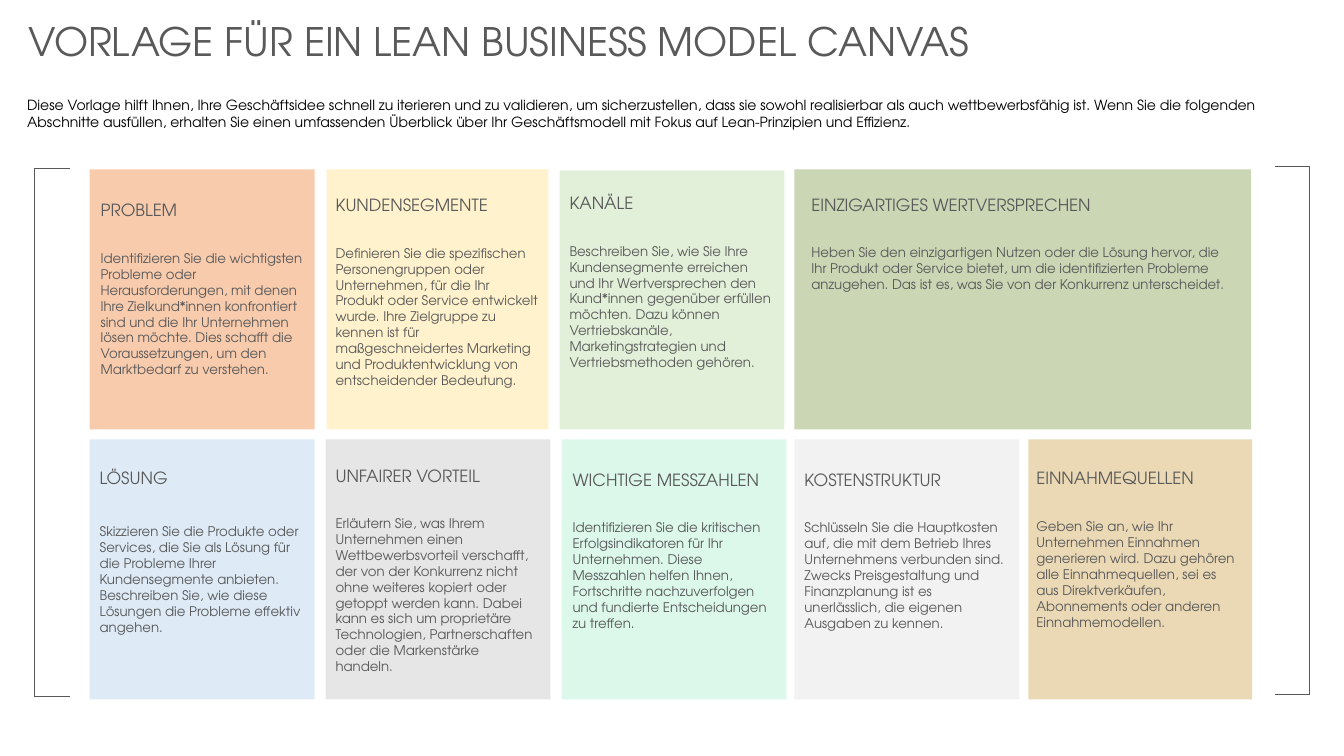
from pptx import Presentation
from pptx.dml.color import RGBColor
from pptx.enum.shapes import MSO_CONNECTOR, MSO_SHAPE
from pptx.enum.text import MSO_ANCHOR, MSO_AUTO_SIZE, PP_ALIGN
from pptx.oxml.ns import qn
from pptx.util import Pt
from lxml import etree

STRAIGHT = MSO_CONNECTOR.STRAIGHT
RECTANGLE = MSO_SHAPE.RECTANGLE
TOP = MSO_ANCHOR.TOP
FIT_SHAPE = MSO_AUTO_SIZE.SHAPE_TO_FIT_TEXT
LEFT = PP_ALIGN.LEFT

EMU_PER_PX = 9144  # 100 px to the inch
TITLE_ONLY = 5
FONT = "TeX Gyre Adventor"
GREY, BLACK = "595959", "000000"


def px(length):
    return length * EMU_PER_PX


def rgb(color):
    return RGBColor.from_string(color)


class Canvas:
    """Style and current slide of the business model canvas."""

    frame_format = {"word_wrap": True, "auto_size": FIT_SHAPE, "vertical_anchor": TOP}

    def __init__(self, slide):
        self.slide = slide

    def set_wording(self, shape, wording, size, color=GREY):
        frame = shape.text_frame
        for name, value in self.frame_format.items():
            setattr(frame, name, value)
        paragraph = frame.paragraphs[0]
        paragraph.alignment = LEFT
        run = paragraph.add_run()
        run.text = wording
        for name, value in {"name": FONT, "size": Pt(size), "bold": False}.items():
            setattr(run.font, name, value)
        run.font.color.rgb = rgb(color)

    def title(self, box, wording, size):
        heading = self.slide.shapes.title
        for name, value in zip(("left", "top", "width", "height"), box):
            setattr(heading, name, px(value))
        self.set_wording(heading, wording, size)

    def text(self, box, wording, size, color=GREY):
        self.set_wording(self.slide.shapes.add_textbox(*map(px, box)), wording, size, color)

    def panel(self, box, color):
        panel = self.slide.shapes.add_shape(RECTANGLE, *map(px, box))
        panel.shadow.inherit = False
        panel.fill.solid()
        panel.fill.fore_color.rgb = rgb(color)
        panel.line.fill.background()

    def bracket(self, spine, tip, top, bottom):
        bracket = self.slide.shapes.add_group_shape()
        for ends in (
            (spine, top, tip, top),
            (spine, bottom, tip, bottom),
            (spine, top, spine, bottom),
        ):
            edge = bracket.shapes.add_connector(STRAIGHT, *map(px, ends))
            edge.line.color.rgb = rgb(GREY)
            edge.line.width = Pt(1)
            properties = edge._element.find(qn("p:spPr"))
            etree.SubElement(properties, qn("a:effectLst"))


# Each section: panel box, fill, text left and width,
# heading top, body top and height, heading, body
SECTIONS = [
    ((89, 168, 223, 258), "F8CBAD", 90, 222, 193, 243, 138, "PROBLEM",
     "Identifizieren Sie die wichtigsten Probleme oder Herausforderungen, mit denen "
     "Ihre Zielkund*innen konfrontiert sind und die Ihr Unternehmen lösen möchte. "
     "Dies schafft die Voraussetzungen, um den Marktbedarf zu verstehen."),
    ((324, 168, 220, 258), "FFF2CC", 323, 222, 188, 238, 154, "KUNDENSEGMENTE",
     "Definieren Sie die spezifischen Personengruppen oder Unternehmen, für die Ihr "
     "Produkt oder Service entwickelt wurde. Ihre Zielgruppe zu kennen ist für "
     "maßgeschneidertes Marketing und Produktentwicklung von entscheidender Bedeutung."),
    ((555, 169, 223, 257), "E2F0D9", 555, 222, 186, 236, 138, "KANÄLE",
     "Beschreiben Sie, wie Sie Ihre Kundensegmente erreichen und Ihr Wertversprechen "
     "den Kund*innen gegenüber erfüllen möchten. Dazu können Vertriebskanäle, "
     "Marketingstrategien und Vertriebsmethoden gehören."),
    ((788, 168, 453, 258), "CBD6B5", 795, 430, 188, 237, 74,
     "EINZIGARTIGES WERTVERSPRECHEN",
     "Heben Sie den einzigartigen Nutzen oder die Lösung hervor, die Ihr Produkt oder "
     "Service bietet, um die identifizierten Probleme anzugehen. Das ist es, was Sie "
     "von der Konkurrenz unterscheidet."),
    ((89, 436, 223, 258), "DEEBF7", 89, 222, 459, 514, 138, "LÖSUNG",
     "Skizzieren Sie die Produkte oder Services, die Sie als Lösung für die Probleme "
     "Ihrer Kundensegmente anbieten. Beschreiben Sie, wie diese Lösungen die Probleme "
     "effektiv angehen."),
    ((323, 436, 223, 258), "E7E6E6", 323, 220, 457, 506, 170, "UNFAIRER VORTEIL",
     "Erläutern Sie, was Ihrem Unternehmen einen Wettbewerbsvorteil verschafft, der von "
     "der Konkurrenz nicht ohne weiteres kopiert oder getoppt werden kann. Dabei kann es "
     "sich um proprietäre Technologien, Partnerschaften oder die Markenstärke handeln."),
    ((557, 436, 223, 258), "DCF8EB", 558, 222, 461, 510, 122, "WICHTIGE MESSZAHLEN",
     "Identifizieren Sie die kritischen Erfolgsindikatoren für Ihr Unternehmen. Diese "
     "Messzahlen helfen Ihnen, Fortschritte nachzuverfolgen und fundierte "
     "Entscheidungen zu treffen."),
    ((788, 436, 223, 258), "F2F2F2", 788, 222, 461, 510, 122, "KOSTENSTRUKTUR",
     "Schlüsseln Sie die Hauptkosten auf, die mit dem Betrieb Ihres Unternehmens "
     "verbunden sind. Zwecks Preisgestaltung und Finanzplanung ist es unerlässlich, "
     "die eigenen Ausgaben zu kennen."),
    ((1020, 436, 222, 258), "EBD9B6", 1018, 222, 459, 509, 122, "EINNAHMEQUELLEN",
     "Geben Sie an, wie Ihr Unternehmen Einnahmen generieren wird. Dazu gehören alle "
     "Einnahmequellen, sei es aus Direktverkäufen, Abonnements oder anderen "
     "Einnahmemodellen."),
]

INTRO = (
    "Diese Vorlage hilft Ihnen, Ihre Geschäftsidee schnell zu iterieren und zu "
    "validieren, um sicherzustellen, dass sie sowohl realisierbar als auch "
    "wettbewerbsfähig ist. Wenn Sie die folgenden Abschnitte ausfüllen, erhalten Sie "
    "einen umfassenden Überblick über Ihr Geschäftsmodell mit Fokus auf "
    "Lean-Prinzipien und Effizienz."
)


def main():
    presentation = Presentation()
    presentation.slide_width, presentation.slide_height = px(1333), px(750)
    layout = presentation.slide_layouts[TITLE_ONLY]
    canvas = Canvas(presentation.slides.add_slide(layout))

    # Title and introduction
    canvas.title((18, 12, 1295, 57), "VORLAGE FÜR EIN LEAN BUSINESS MODEL CANVAS", 28)
    canvas.text((17, 91, 1290, 44), INTRO, 10, BLACK)

    # Canvas sections
    for panel, fill, left, width, heading_top, body_top, height, heading, body in SECTIONS:
        canvas.panel(panel, fill)
        canvas.text((left, heading_top, width, 30), heading, 12)
        canvas.text((left, body_top, width, height), body, 9.5)

    # Brackets on both sides
    canvas.bracket(34, 69, 167, 691)
    canvas.bracket(1299, 1265, 165, 689)

    presentation.save("out.pptx")


if __name__ == "__main__":
    main()
